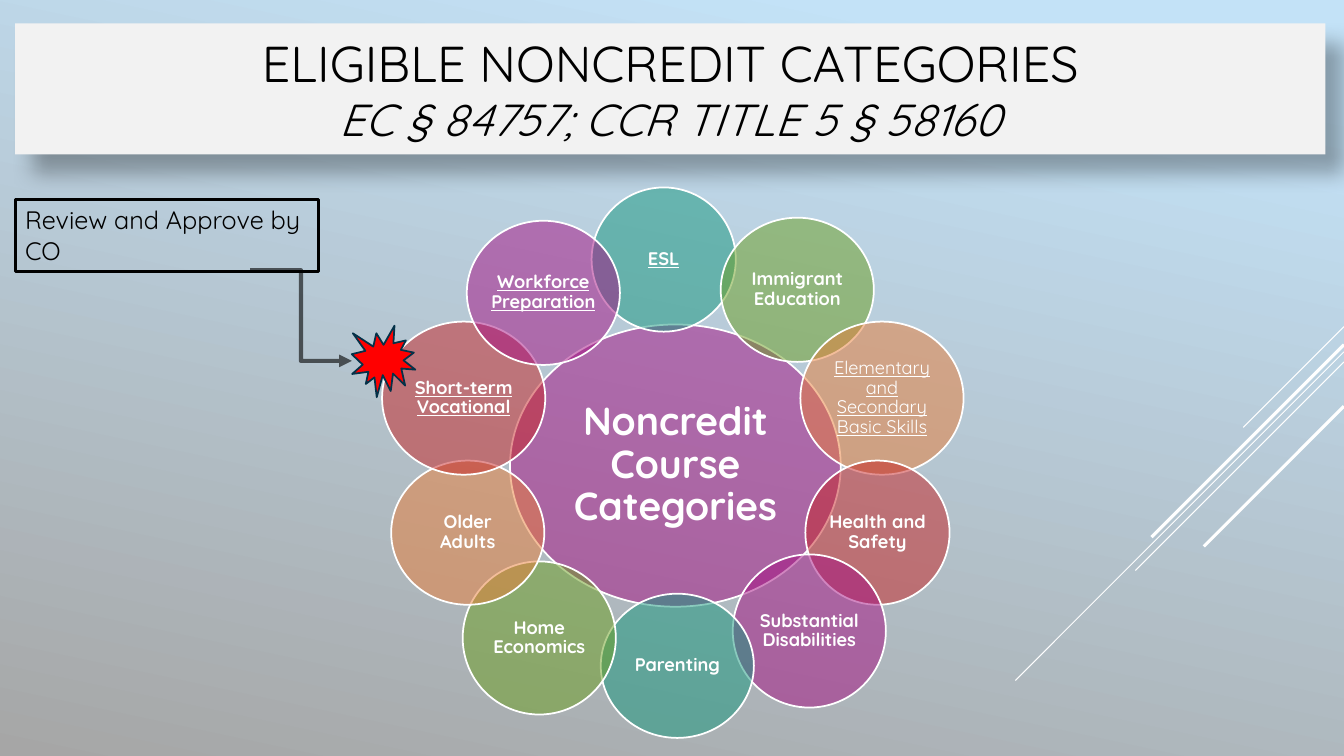
from itertools import cycle

from lxml.etree import SubElement
from pptx import Presentation
from pptx.dml.color import RGBColor
from pptx.enum.shapes import MSO_CONNECTOR, MSO_SHAPE
from pptx.enum.text import MSO_ANCHOR, MSO_AUTO_SIZE, PP_ALIGN
from pptx.oxml.ns import qn
from pptx.util import Pt

PETAL_COLORS = ["14967C", "6A9E1F", "E87D37", "C62324", "A50E82"]
PETALS = [
    ("ESL", 422.6, 133.9, 103, 103, {"underline": True}),
    ("Immigrant Education", 514.8, 155.5, 109.4, 103, {}),
    ("Elementary and Secondary Basic Skills", 571.7, 229.7, 116.6, 109.4,
     {"underline": True, "bold": False}),
    ("Health and Safety", 575.3, 329, 103, 103, {}),
    ("Substantial Disabilities", 523.4, 396, 109.4, 109.4, {}),
    ("Parenting", 429.1, 424.1, 109.4, 103, {}),
    ("Home Economics", 330.5, 401, 109.4, 109.4, {}),
    ("Older Adults", 279.4, 329, 109.4, 103, {}),
    ("Short-term Vocational", 272.9, 229.7, 116.6, 109.4, {"underline": True}),
    ("Workforce Preparation", 333.4, 157.7, 109.4, 103, {"underline": True}),
]
STREAKS = [(233.3, 72, 0.75), (251.3, 234.7, 0.75), (258.5, 149, 0.75),
           (246.2, 137.5, 2.25), (290.2, 100.1, 2.25)]


def color(value):
    """Turn a hex string into a colour."""
    return RGBColor.from_string(value)


def fade(properties, percent):
    """Set the opacity of the first colour in the shape properties."""
    first = properties.find(".//" + qn("a:srgbClr"))
    SubElement(first, qn("a:alpha"), val=str(percent * 1000))


def add_span(para, text, size=13, ink="FFFFFF", bold=False, italic=False, underline=False):
    """Append formatted text to a paragraph."""
    span = para.add_run()
    span.text = text
    font = span.font
    font.name, font.size, font.color.rgb = "Quicksand", Pt(size), color(ink)
    font.bold, font.italic, font.underline = bold, italic, underline


class SlideBuilder:
    """Hold the style and the current slide."""

    def __init__(self, page, width):
        """Keep the page and its width."""
        self.page = page
        self.width = width

    def background(self, top, bottom, angle):
        """Fill the page with a linear gradient."""
        fill = self.page.background.fill
        fill.gradient()
        fill.gradient_angle = 360 - angle
        for stop, value, position in zip(fill.gradient_stops, (top, bottom), (0.1, 1)):
            stop.color.rgb = color(value)
            stop.position = position

    def title(self, heading, subheading, left, top, width, height):
        """Format the title placeholder as a shadowed banner."""
        box = self.page.shapes.title
        box.left, box.top, box.width, box.height = Pt(left), Pt(top), Pt(width), Pt(height)
        box.fill.solid()
        box.fill.fore_color.rgb = color("F2F2F2")
        box.shadow.inherit = False
        effects = box.element.spPr.find(qn("a:effectLst"))
        shadow = SubElement(effects, qn("a:outerShdw"), blurRad=str(Pt(15)), dist=str(Pt(18)),
                            dir=str(45 * 60000), algn="tl", rotWithShape="0")
        black = SubElement(shadow, qn("a:srgbClr"), val="000000")
        SubElement(black, qn("a:alpha"), val="30000")
        frame = box.text_frame
        frame.auto_size, frame.word_wrap = MSO_AUTO_SIZE.NONE, True
        frame.vertical_anchor = MSO_ANCHOR.MIDDLE
        para = frame.paragraphs[0]
        para.alignment = PP_ALIGN.CENTER
        add_span(para, heading, size=36, ink="000000")
        para.add_line_break()
        add_span(para, subheading, size=32, ink="000000", italic=True)

    def shape(self, kind, left, top, width, height, fill=None, opacity=100,
              line="FFFFFF", weight=1.25):
        """Add an outlined preset shape."""
        box = self.page.shapes.add_shape(kind, Pt(left), Pt(top), Pt(width), Pt(height))
        box.shadow.inherit = False
        if fill:
            box.fill.solid()
            box.fill.fore_color.rgb = color(fill)
            if opacity < 100:
                fade(box.element.spPr, opacity)
        else:
            box.fill.background()
        box.line.color.rgb = color(line)
        box.line.width = Pt(weight)
        return box

    def circle(self, text, left, top, width, height, fill, **style):
        """Add a translucent ellipse with centred text."""
        box = self.shape(MSO_SHAPE.OVAL, left, top, width, height, fill, opacity=50)
        frame = box.text_frame
        frame.word_wrap, frame.vertical_anchor = True, MSO_ANCHOR.MIDDLE
        frame.margin_left = frame.margin_right = Pt(1.2)
        frame.margin_top = frame.margin_bottom = Pt(1.2)
        para = frame.paragraphs[0]
        para.alignment, para.line_spacing = PP_ALIGN.CENTER, 0.9
        add_span(para, text, **{"bold": True, **style})

    def callout(self, text, left, top, width, height):
        """Add a framed note."""
        box = self.shape(MSO_SHAPE.RECTANGLE, left, top, width, height, line="000000", weight=2.25)
        frame = box.text_frame
        frame.word_wrap, frame.vertical_anchor = True, MSO_ANCHOR.TOP
        frame.auto_size = MSO_AUTO_SIZE.SHAPE_TO_FIT_TEXT
        para = frame.paragraphs[0]
        para.alignment = PP_ALIGN.LEFT
        add_span(para, text, size=18, ink="000000")

    def connector(self, kind, start, end, ink, weight):
        """Add a plain connector between two points."""
        link = self.page.shapes.add_connector(kind, *map(Pt, start + end))
        link.line.color.rgb = color(ink)
        link.line.width = Pt(weight)
        SubElement(link.element.spPr, qn("a:effectLst"))
        return link

    def streak(self, top, run, weight):
        """Add a diagonal line falling from the right edge."""
        self.connector(MSO_CONNECTOR.STRAIGHT, (self.width, top),
                       (self.width - run, top + run), "FFFFFF", weight)

    def arrow(self, start, end):
        """Add a translucent elbow arrow."""
        link = self.connector(MSO_CONNECTOR.ELBOW, start, end, "000000", 3)
        fade(link.element.spPr, 60)
        SubElement(link.element.spPr.find(qn("a:ln")), qn("a:tailEnd"), type="triangle")


def main():
    """Build and save the slide."""
    deck = Presentation()
    deck.slide_width, deck.slide_height = Pt(960), Pt(540)
    builder = SlideBuilder(deck.slides.add_slide(deck.slide_layouts[5]), 960)
    builder.background("C3E2F7", "A6A6A6", 102)
    for streak in STREAKS:
        builder.streak(*streak)
    builder.circle("Noncredit Course Categories", 364.3, 231.8, 236.2, 201.6, "A50E82", size=28)
    for (text, left, top, width, height, style), fill in zip(PETALS, cycle(PETAL_COLORS)):
        builder.circle(text, left, top, width, height, fill, **style)
    builder.title("ELIGIBLE NONCREDIT CATEGORIES", "EC § 84757; CCR TITLE 5 § 58160",
                  10.8, 16.6, 936, 93.6)
    builder.shape(MSO_SHAPE.EXPLOSION1, 251.3, 232.6, 45.4, 51.1, "FF0000", line="043148")
    builder.callout("Review and Approve by CO", 10.8, 142.6, 216.7, 51.1)
    builder.arrow((178.6, 193), (251.3, 257.8))
    deck.save("out.pptx")


if __name__ == "__main__":
    main()
